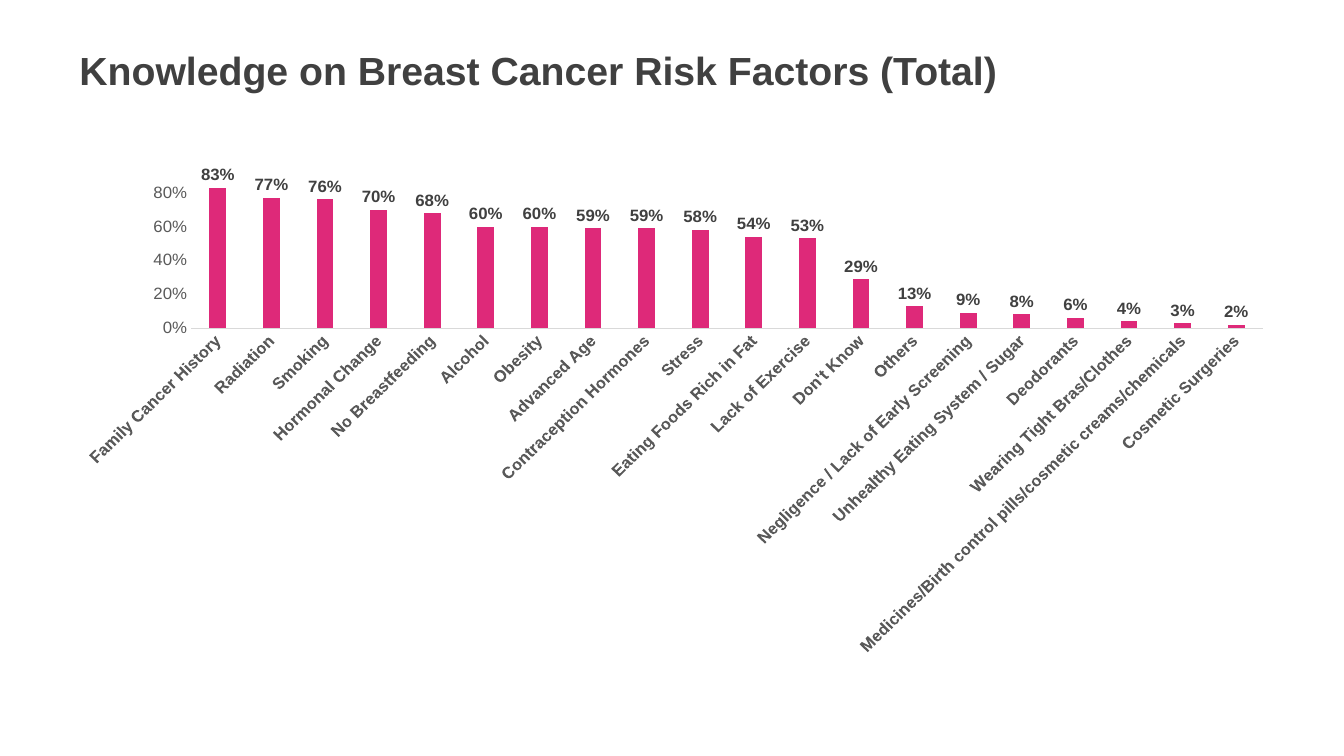
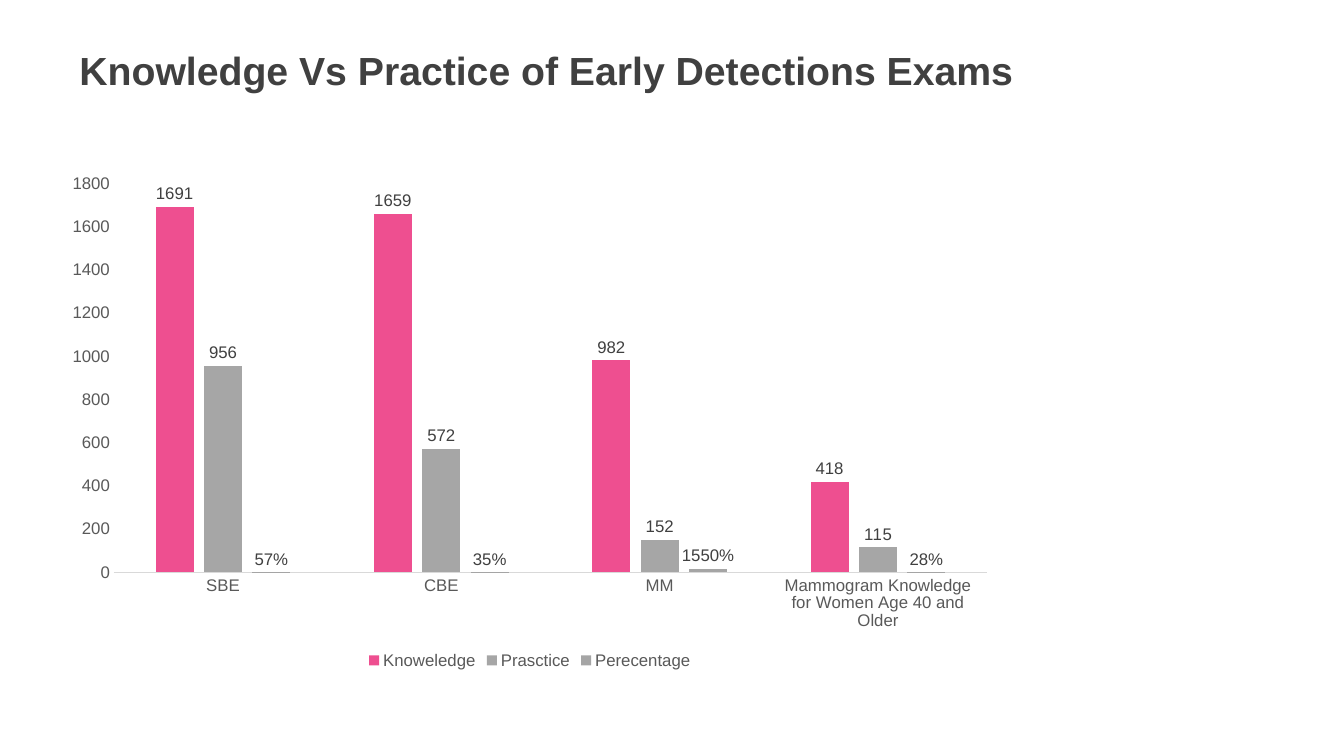
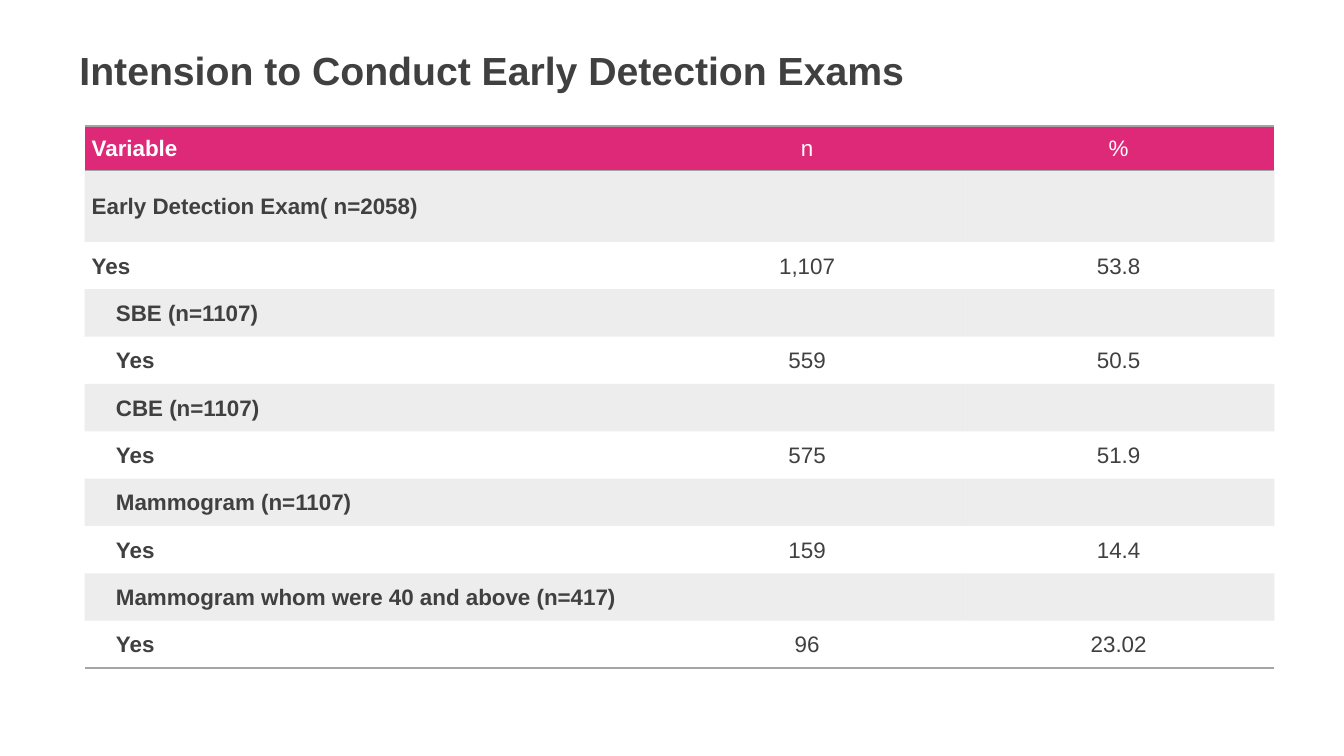
from pptx import Presentation
from pptx.chart.data import CategoryChartData
from pptx.dml.color import RGBColor
from pptx.enum.chart import XL_CHART_TYPE, XL_LABEL_POSITION, XL_LEGEND_POSITION, XL_TICK_MARK
from pptx.enum.text import MSO_ANCHOR, PP_ALIGN
from pptx.oxml.ns import qn
from pptx.util import Inches, Pt
from lxml import etree

COLUMNS = XL_CHART_TYPE.COLUMN_CLUSTERED
ABOVE_BAR = XL_LABEL_POSITION.OUTSIDE_END
LEGEND_BOTTOM = XL_LEGEND_POSITION.BOTTOM
NO_TICK = XL_TICK_MARK.NONE
MIDDLE = MSO_ANCHOR.MIDDLE
LEFT, CENTER = PP_ALIGN.LEFT, PP_ALIGN.CENTER

FONT = "Arial"
COLORS = {
    "text": "404040",
    "axis_text": "595959",
    "axis_line": "D9D9D9",
    "pink": "DE2979",
    "light_pink": "EE4F90",
    "gray": "A6A6A6",
    "rule": "A5A5A5",
    "white": "FFFFFF",
}
PLAIN_TABLE_STYLE = "{2D5ABB26-0587-4C30-8999-92F81FD0307C}"

# Content
RISK_FACTORS = [
    ("Family Cancer History", 0.83),
    ("Radiation", 0.77),
    ("Smoking", 0.76),
    ("Hormonal Change", 0.7),
    ("No Breastfeeding", 0.68),
    ("Alcohol", 0.6),
    ("Obesity", 0.6),
    ("Advanced Age", 0.59),
    ("Contraception Hormones", 0.59),
    ("Stress", 0.58),
    ("Eating Foods Rich in Fat", 0.54),
    ("Lack of Exercise", 0.53),
    ("Don't Know", 0.29),
    ("Others", 0.13),
    ("Negligence / Lack of Early Screening", 0.09),
    ("Unhealthy Eating System / Sugar", 0.08),
    ("Deodorants", 0.06),
    ("Wearing Tight Bras/Clothes", 0.04),
    ("Medicines/Birth control pills/cosmetic creams/chemicals", 0.03),
    ("Cosmetic Surgeries", 0.02),
]
EXAMS = ["SBE", "CBE", "MM", "Mammogram Knowledge for Women Age 40 and Older"]

# Series: name, values, colour, label format
RISK_SERIES = [("Series 1", [share for _, share in RISK_FACTORS], "pink", "0%")]
EXAM_SERIES = [
    ("Knoweledge", [1691, 1659, 982, 418], "light_pink", "General"),
    ("Prasctice", [956, 572, 152, 115], "gray", "General"),
    ("Perecentage", [0.57, 0.35, 15.5, 0.28], "rule", "0%"),
]

# Table rows: indent level, then the cells
INTENTION_ROWS = [
    (0, "Variable", "n", "%"),
    (0, "Early Detection Exam( n=2058)", "", ""),
    (0, "Yes", "1,107", "53.8"),
    (1, "SBE (n=1107)", "", ""),
    (1, "Yes", "559", "50.5"),
    (1, "CBE (n=1107)", "", ""),
    (1, "Yes", "575", "51.9"),
    (1, "Mammogram (n=1107)", "", ""),
    (1, "Yes", "159", "14.4"),
    (1, "Mammogram whom were 40 and above (n=417)", "", ""),
    (1, "Yes", "96", "23.02"),
]
COLUMN_WIDTHS = [5.62, 3.09, 3.09]
ROW_HEIGHTS = [0.44, 0.71] + [0.47] * 9


def rgb(name):
    return RGBColor.from_string(COLORS[name])


def set_font(font, size=12, color="text", bold=False):
    font.name, font.size, font.bold = FONT, Pt(size), bold
    font.color.rgb = rgb(color)


def write(frame, text, align=LEFT, spacing=None, indent=0, **style):
    para = frame.paragraphs[0]
    para.alignment = align
    if spacing:
        para.line_spacing = spacing
    if indent:
        properties = para._p.get_or_add_pPr()
        properties.set("marL", str(Inches(indent)))
        properties.set("indent", "0")
    span = para.add_run()
    span.text = text
    set_font(span.font, **style)


def add_page(deck, title):
    page = deck.slides.add_slide(deck.slide_layouts[6])
    box = page.shapes.add_textbox(Inches(0.69), Inches(0.41), Inches(12.06), Inches(0.57))
    box.text_frame.word_wrap = True
    write(box.text_frame, title, size=28, bold=True)
    return page


def add_columns(page, place, categories, series, top, step,
                axis_format="General", bold=False, tilt=None, legend=False):
    data = CategoryChartData()
    data.categories = categories
    for name, values, _, number_format in series:
        data.add_series(name, values, number_format)
    chart = page.shapes.add_chart(COLUMNS, *map(Inches, place), data).chart
    set_font(chart.font)
    chart.has_title = False
    chart.has_legend = legend
    if legend:
        chart.legend.position = LEGEND_BOTTOM
        chart.legend.include_in_layout = False
        set_font(chart.legend.font, color="axis_text")

    # Axes
    category_axis, value_axis = chart.category_axis, chart.value_axis
    for axis in (category_axis, value_axis):
        axis.major_tick_mark = axis.minor_tick_mark = NO_TICK
        axis.has_major_gridlines = False
    set_font(category_axis.tick_labels.font, color="axis_text", bold=bold)
    set_font(value_axis.tick_labels.font, color="axis_text")
    category_axis.format.line.color.rgb = rgb("axis_line")
    category_axis.format.line.width = Pt(0.75)
    if tilt:
        body = category_axis._element.find(qn("c:txPr")).find(qn("a:bodyPr"))
        body.set("rot", str(tilt * 60000))
        body.set("vert", "horz")
    value_axis.format.line.fill.background()
    value_axis.minimum_scale, value_axis.maximum_scale = 0, top
    value_axis.major_unit = step
    value_axis.tick_labels.number_format = axis_format
    value_axis.tick_labels.number_format_is_linked = False

    # Bars and their labels
    plot = chart.plots[0]
    plot.gap_width, plot.overlap, plot.vary_by_categories = 219, -27, False
    for bars, (_, _, color, number_format) in zip(plot.series, series):
        bars.format.fill.solid()
        bars.format.fill.fore_color.rgb = rgb(color)
        labels = bars.data_labels
        labels.show_value, labels.position = True, ABOVE_BAR
        labels.number_format = number_format
        labels.number_format_is_linked = False
        set_font(labels.font, bold=bold)


def add_rule(cell, side):
    line = etree.SubElement(cell._tc.get_or_add_tcPr(), qn("a:" + side), w=str(Pt(1)))
    fill = etree.SubElement(line, qn("a:solidFill"))
    etree.SubElement(fill, qn("a:srgbClr"), val=COLORS["rule"])


def fill_cell(cell, color, opacity=100):
    cell.fill.solid()
    cell.fill.fore_color.rgb = rgb(color)
    if opacity < 100:
        shade = cell._tc.tcPr.find(qn("a:solidFill"))[0]
        etree.SubElement(shade, qn("a:alpha"), val=str(opacity * 1000))


def add_intention_table(page):
    frame = page.shapes.add_table(
        len(INTENTION_ROWS), len(COLUMN_WIDTHS), Inches(0.84), Inches(1.25),
        Inches(sum(COLUMN_WIDTHS)), Inches(sum(ROW_HEIGHTS)))
    table = frame.table
    table.first_row = table.horz_banding = False
    table._tbl.tblPr.find(qn("a:tableStyleId")).text = PLAIN_TABLE_STYLE
    for column, width in zip(table.columns, COLUMN_WIDTHS):
        column.width = Inches(width)
    for row, height in zip(table.rows, ROW_HEIGHTS):
        row.height = Inches(height)

    last = len(INTENTION_ROWS) - 1
    for r, (level, *texts) in enumerate(INTENTION_ROWS):
        for c, text in enumerate(texts):
            cell = table.cell(r, c)
            cell.vertical_anchor = MIDDLE
            cell.margin_left = cell.margin_right = Inches(0.07)
            cell.margin_top = cell.margin_bottom = 0
            if r == 0:
                add_rule(cell, "lnT")
            if r in (0, last):
                add_rule(cell, "lnB")
            if r == 0:
                fill_cell(cell, "pink")
            elif r % 2:
                fill_cell(cell, "rule", opacity=20)
            else:
                cell.fill.background()
            if text:
                write(cell.text_frame, text, size=16, bold=c == 0, spacing=1.07,
                      align=CENTER if c else LEFT,
                      indent=0 if c else level * 0.24,
                      color="text" if r else "white")


def main():
    deck = Presentation()
    deck.slide_width, deck.slide_height = Inches(13.33), Inches(7.5)

    page = add_page(deck, "Knowledge on Breast Cancer Risk Factors (Total)")
    add_columns(page, (0.61, 1.65, 12.16, 4.85), [factor for factor, _ in RISK_FACTORS],
                RISK_SERIES, top=0.9, step=0.2, axis_format="0%", bold=True, tilt=-45)

    page = add_page(deck, "Knowledge Vs Practice of Early Detections Exams")
    add_columns(page, (0.53, 1.63, 9.45, 5.05), EXAMS, EXAM_SERIES,
                top=1800, step=200, legend=True)

    page = add_page(deck, "Intension to Conduct Early Detection Exams")
    add_intention_table(page)

    deck.save("out.pptx")


if __name__ == "__main__":
    main()
